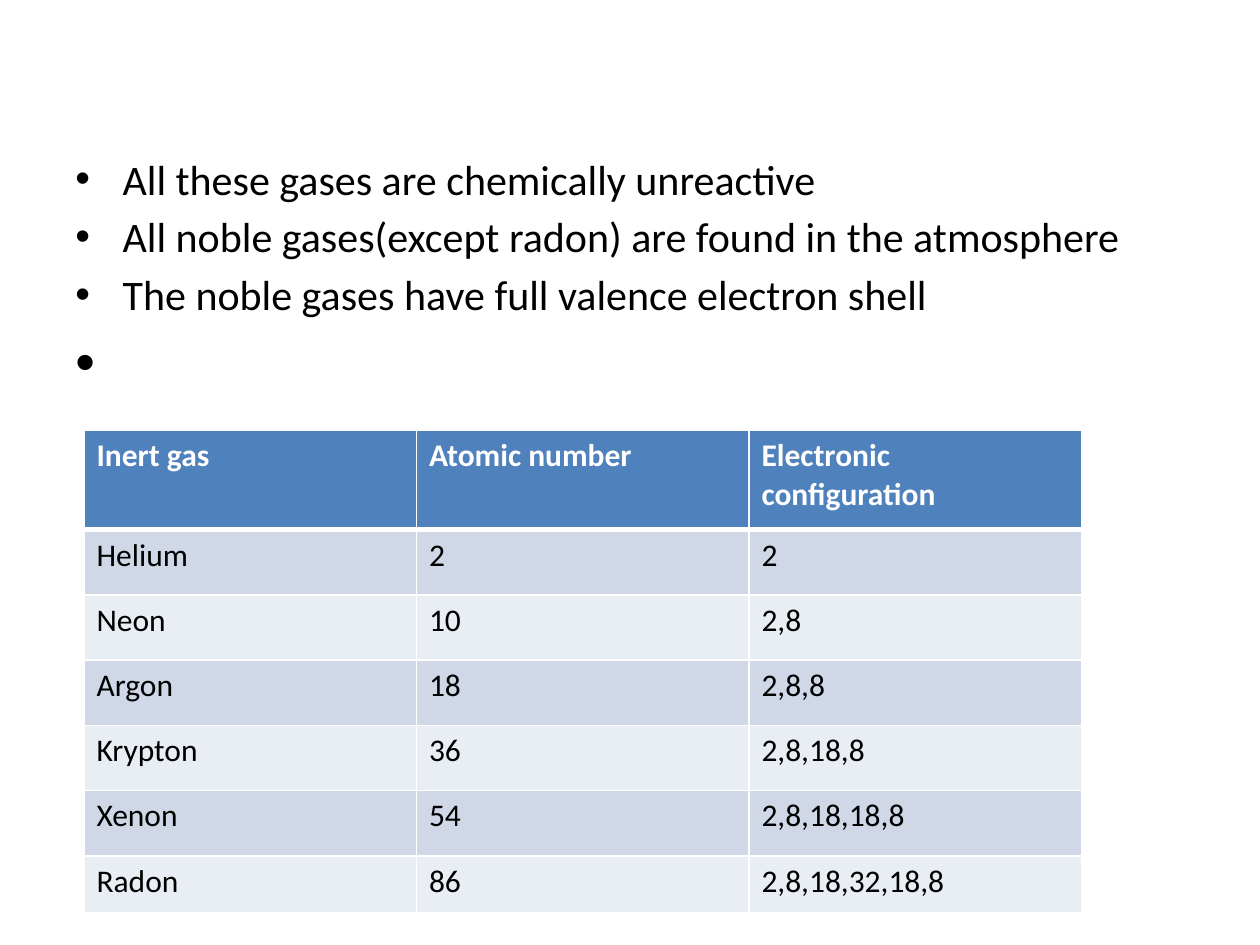
from lxml import etree
from pptx import Presentation
from pptx.dml.color import RGBColor
from pptx.oxml.ns import qn
from pptx.util import Pt

FONT = "Calibri"
BLACK, WHITE = "000000", "FFFFFF"
HEADER_FILL = "4F81BD"
BAND_FILLS = ["D0D8E8", "E9EDF4"]

BULLETS = [
    ("All these gases are chemically unreactive", 24),
    ("All noble gases(except radon) are found in the atmosphere", 24),
    ("The noble gases have full valence electron shell", 24),
    (" ", 32),
]
GASES = [
    ("Inert gas", "Atomic number", "Electronic configuration"),
    ("Helium", "2", "2"),
    ("Neon", "10", "2,8"),
    ("Argon", "18", "2,8,8"),
    ("Krypton", "36", "2,8,18,8"),
    ("Xenon", "54", "2,8,18,18,8"),
    ("Radon", "86", "2,8,18,32,18,8"),
]
BODY = (36, 84, 648, 398)
TABLE_LEFT, TABLE_TOP, COLUMN_WIDTH = 48, 246, 190
ROW_HEIGHTS = [56.7] + [37.3] * 5 + [32.6]
INDENT = 27


def color(value):
    return RGBColor.from_string(value)


def write(para, text, size=18, fill=BLACK, bold=False):
    span = para.add_run()
    span.text = text
    span.font.name = FONT
    span.font.size = Pt(size)
    span.font.bold = bold
    span.font.color.rgb = color(fill)


def add_bullet(para):
    properties = para._p.get_or_add_pPr()
    properties.set("marL", str(Pt(INDENT)))
    properties.set("indent", str(-Pt(INDENT)))
    etree.SubElement(properties, qn("a:buFont"), typeface="Arial")
    etree.SubElement(properties, qn("a:buChar"), char="•")


def add_borders(cell, bottom):
    properties = cell._tc.get_or_add_tcPr()
    for side, width in (("L", 1), ("R", 1), ("T", 1), ("B", bottom)):
        line = etree.SubElement(properties, qn(f"a:ln{side}"), w=str(Pt(width)))
        solid = etree.SubElement(line, qn("a:solidFill"))
        etree.SubElement(solid, qn("a:srgbClr"), val=WHITE)


def add_body(page):
    frame = page.shapes.add_textbox(*map(Pt, BODY)).text_frame
    frame.word_wrap = True
    for index, (text, size) in enumerate(BULLETS):
        para = frame.add_paragraph() if index else frame.paragraphs[0]
        para.space_before = Pt(round(size * 0.175, 1))
        add_bullet(para)
        write(para, text, size=size)


def add_gas_table(page):
    columns = len(GASES[0])
    table = page.shapes.add_table(
        len(GASES), columns, Pt(TABLE_LEFT), Pt(TABLE_TOP),
        Pt(COLUMN_WIDTH * columns), Pt(sum(ROW_HEIGHTS))).table
    for column in table.columns:
        column.width = Pt(COLUMN_WIDTH)
    for index, values in enumerate(GASES):
        table.rows[index].height = Pt(ROW_HEIGHTS[index])
        header = index == 0
        for position, text in enumerate(values):
            cell = table.cell(index, position)
            add_borders(cell, bottom=3 if header else 1)
            cell.fill.solid()
            cell.fill.fore_color.rgb = color(
                HEADER_FILL if header else BAND_FILLS[(index - 1) % 2])
            write(cell.text_frame.paragraphs[0], text,
                  fill=WHITE if header else BLACK, bold=header)


def main():
    deck = Presentation()
    deck.slide_width, deck.slide_height = Pt(720), Pt(540)
    page = deck.slides.add_slide(deck.slide_layouts[6])
    add_body(page)
    add_gas_table(page)
    deck.save("out.pptx")


if __name__ == "__main__":
    main()
